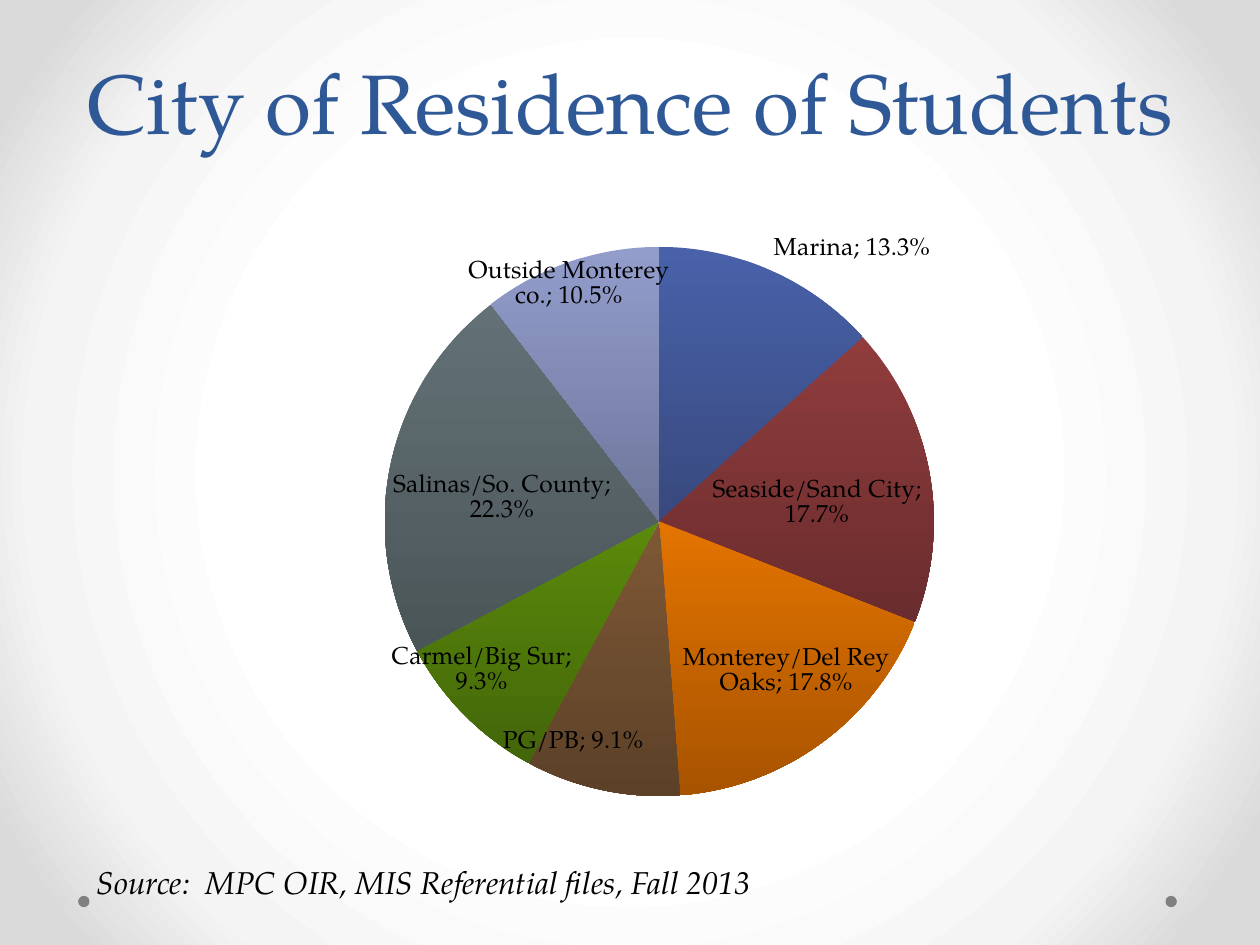
"""Build a slide with a pie chart of the students' city of residence."""
from pptx import Presentation
from pptx.chart.data import CategoryChartData
from pptx.dml.color import RGBColor
from pptx.enum.chart import XL_CHART_TYPE, XL_LABEL_POSITION
from pptx.enum.shapes import MSO_SHAPE
from pptx.enum.text import MSO_ANCHOR, PP_ALIGN
from pptx.oxml import parse_xml
from pptx.oxml.ns import nsdecls, qn
from pptx.util import Inches, Pt

FONT = "TeX Gyre Pagella"
COLORS = {"title": "2F5897", "text": "000000", "dot": "808080"}
BACKDROP = [(50, "FFFFFF"), (76, "F4F4F4"), (92, "DADADA")]
CITIES = [
    ("Marina", 0.133, "4861A9", "38497E", 0.12, -0.22),
    ("Seaside/Sand City", 0.177, "903C3C", "6A2C2E", 0.02, 0.01),
    ("Monterey/Del Rey Oaks", 0.178, "E37400", "A85300", 0.04, 0.06),
    ("PG/PB", 0.091, "7E5835", "5C4128", -0.05, 0.13),
    ("Carmel/Big Sur", 0.093, "5A8A0B", "43660A", -0.07, 0.08),
    ("Salinas/So. County", 0.223, "637176", "4A5558", -0.02, 0.01),
    ("Outside Monterey co.", 0.105, "929DCC", "6D769A", -0.04, -0.16),
]


def style(font, size, color):
    font.name = FONT
    font.size = Pt(size)
    font.color.rgb = RGBColor.from_string(COLORS[color])


prs = Presentation()
prs.slide_width, prs.slide_height = Inches(10), Inches(7.5)
slide = prs.slides.add_slide(prs.slide_layouts[5])

slide.background.fill.gradient()
backdrop = next(slide.element.iter(qn("a:gradFill")))
stops = "".join(
    f'<a:gs pos="{pos * 1000}"><a:srgbClr val="{color}"/></a:gs>' for pos, color in BACKDROP
)
backdrop.getparent().replace(backdrop, parse_xml(
    f'<a:gradFill {nsdecls("a")} rotWithShape="1"><a:gsLst>{stops}</a:gsLst>'
    '<a:path path="circle"><a:fillToRect l="50000" t="50000" r="50000" b="50000"/></a:path>'
    "</a:gradFill>"
))

for left in (9.25, 0.62):
    dot = slide.shapes.add_shape(
        MSO_SHAPE.OVAL, Inches(left), Inches(7.11), Inches(0.09), Inches(0.09)
    )
    dot.shadow.inherit = False
    dot.fill.solid()
    dot.fill.fore_color.rgb = RGBColor.from_string(COLORS["dot"])
    dot.line.fill.background()

title = slide.shapes.title
title.left, title.top, title.width, title.height = Inches(0.5), Inches(0), Inches(9), Inches(1.25)
title.text_frame.text = "City of Residence of Students"
title.text_frame.vertical_anchor = MSO_ANCHOR.BOTTOM
heading = title.text_frame.paragraphs[0]
heading.alignment = PP_ALIGN.CENTER
heading.line_spacing = Pt(58)
style(heading.runs[0].font, 48, "title")

residence = CategoryChartData(number_format="0.0%")
residence.categories = [city[0] for city in CITIES]
residence.add_series("Series 1", [city[1] for city in CITIES])
pie = slide.shapes.add_chart(
    XL_CHART_TYPE.PIE, Inches(0.42), Inches(1.42), Inches(9.08), Inches(5.28), residence
).chart
pie.has_legend = False
pie.has_title = False
style(pie.font, 14, "text")

plot_area = next(pie.element.iter(qn("c:plotArea")))
for old_layout in plot_area.findall(qn("c:layout")):
    plot_area.remove(old_layout)
plot_area.insert(0, parse_xml(
    f'<c:layout {nsdecls("c")}><c:manualLayout><c:layoutTarget val="inner"/>'
    '<c:xMode val="edge"/><c:yMode val="edge"/><c:x val="0.29"/><c:y val="0.1"/>'
    '<c:w val="0.48"/><c:h val="0.83"/></c:manualLayout></c:layout>'
))

pie.plots[0].vary_by_categories = True
series = pie.plots[0].series[0]
labels = series.data_labels
labels.show_value = True
labels.show_category_name = True
labels.show_percentage = False
labels.show_legend_key = False
labels.number_format = "0.0%"
labels.number_format_is_linked = False
labels.position = XL_LABEL_POSITION.CENTER
style(labels.font, 14, "text")
label_list = next(series._element.iter(qn("c:dLbls")))

for index, (city, share, top_color, bottom_color, dx, dy) in enumerate(CITIES):
    slice_format = series.points[index].format
    slice_format.line.fill.background()
    slice_format.fill.gradient()
    slice_format.fill.gradient_angle = 270
    for stop, color in zip(slice_format.fill.gradient_stops, (top_color, bottom_color)):
        stop.color.rgb = RGBColor.from_string(color)
    label_list.insert(index, parse_xml(
        f'<c:dLbl {nsdecls("c")}><c:idx val="{index}"/><c:layout><c:manualLayout>'
        f'<c:x val="{dx}"/><c:y val="{dy}"/></c:manualLayout></c:layout>'
        '<c:numFmt formatCode="0.0%" sourceLinked="0"/><c:dLblPos val="ctr"/>'
        '<c:showLegendKey val="0"/><c:showVal val="1"/><c:showCatName val="1"/>'
        '<c:showSerName val="0"/><c:showPercent val="0"/><c:showBubbleSize val="0"/></c:dLbl>'
    ))

source = slide.shapes.add_textbox(Inches(0.67), Inches(6.8), Inches(6.17), Inches(0.4))
source.text_frame.word_wrap = True
source.text_frame.text = "Source:  MPC OIR, MIS Referential files, Fall 2013"
credit = source.text_frame.paragraphs[0].runs[0].font
style(credit, 18, "text")
credit.italic = True

prs.save("out.pptx")
